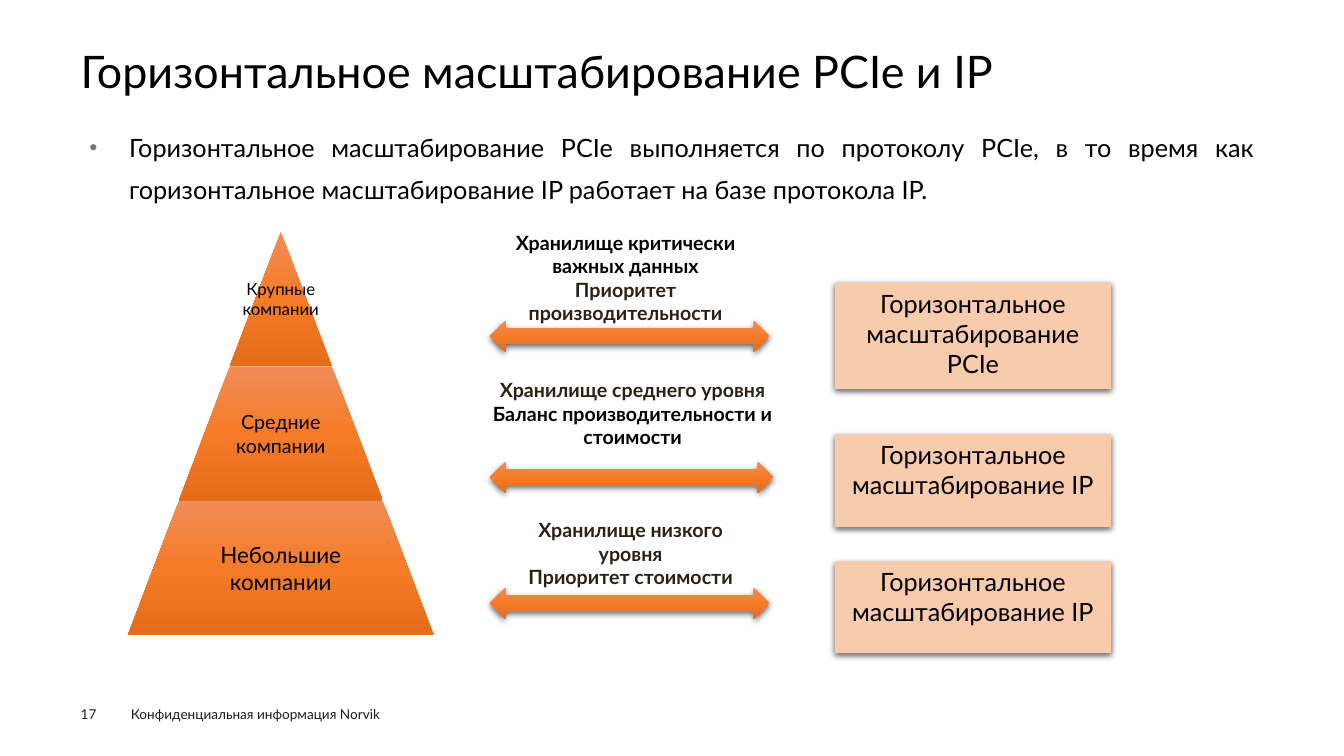
from copy import deepcopy
from lxml.etree import SubElement
from pptx import Presentation
from pptx.dml.color import RGBColor
from pptx.enum.shapes import MSO_SHAPE as Shape
from pptx.enum.text import MSO_ANCHOR as Anchor, PP_ALIGN as Align
from pptx.oxml.ns import qn
from pptx.util import Inches, Pt

FONT = "Lato"
BLACK, BROWN, FOOTER_GRAY, PEACH = "000000", "2D2015", "1D1D1B", "F8CBAD"
ORANGE_STOPS = [(0, "F18C57"), (0.5, "F67B28"), (1, "E56C19")]
DEFAULT_INSETS = (0.1, 0.05)


def color(value):
    return RGBColor.from_string(value)


def write(shape, lines, size, bold=False, align=Align.LEFT,
          insets=DEFAULT_INSETS, anchor=Anchor.TOP):
    frame = shape.text_frame
    frame.word_wrap = True
    frame.vertical_anchor = anchor
    frame.margin_left = frame.margin_right = Inches(insets[0])
    frame.margin_top = frame.margin_bottom = Inches(insets[1])
    frame.text = "\n".join(text for text, _ in lines)
    for paragraph, (_, ink) in zip(frame.paragraphs, lines):
        paragraph.alignment = align
        for run in paragraph.runs:
            run.font.name = FONT
            run.font.size = Pt(size)
            run.font.bold = bold
            run.font.color.rgb = color(ink)
    return frame


def add_label(slide, box, lines, size, **style):
    label = slide.shapes.add_textbox(*map(Inches, box))
    return write(label, lines, size, **style)


def fill_orange(shape):
    shape.line.fill.background()
    shape.fill.gradient()
    shape.fill.gradient_angle = 270
    stops = shape._element.spPr.find(qn("a:gradFill")).find(qn("a:gsLst"))
    stops.append(deepcopy(stops[-1]))
    for stop, (position, value) in zip(shape.fill.gradient_stops, ORANGE_STOPS):
        stop.position = position
        stop.color.rgb = color(value)


def add_shadow(shape):
    shape.shadow.inherit = False
    effects = shape._element.spPr.find(qn("a:effectLst"))
    shadow = SubElement(effects, qn("a:outerShdw"), blurRad=str(Pt(4.5)),
                        dist=str(Pt(1.5)), dir="5400000", rotWithShape="0")
    ink = SubElement(shadow, qn("a:srgbClr"), val=BLACK)
    SubElement(ink, qn("a:alpha"), val="63000")


def add_title(slide, box, title):
    frame = add_label(slide, box, [(title, BLACK)], 32, insets=(0, 0))
    frame.paragraphs[0].line_spacing = 0.9


def add_statement(slide, box, statement):
    frame = add_label(slide, box, [(statement, BLACK)], 18,
                      align=Align.JUSTIFY, insets=(0.09, 0.04))
    paragraph = frame.paragraphs[0]
    paragraph.line_spacing = 1.4
    props = paragraph._p.get_or_add_pPr()
    props.set("marL", str(Inches(0.39)))
    props.set("indent", str(Inches(-0.39)))
    bullet_color = SubElement(props, qn("a:buClr"))
    SubElement(bullet_color, qn("a:srgbClr"), val="777777")
    SubElement(props, qn("a:buSzPct"), val="50000")
    SubElement(props, qn("a:buFont"), typeface=FONT)
    SubElement(props, qn("a:buChar"), char="●")


def add_pyramid(slide, box, tiers):
    left, top, width, height = box
    center = left + width / 2
    tier_height = height / len(tiers)
    half_step = width / 2 / len(tiers)
    for level, (name, size, inset) in enumerate(tiers):
        upper, lower = level * half_step, (level + 1) * half_step
        ceiling = top + level * tier_height
        floor = ceiling + tier_height
        corners = [(center - lower, floor), (center - upper, ceiling),
                   (center + upper, ceiling), (center + lower, floor)]
        points = [(Inches(x), Inches(y)) for x, y in corners]
        outline = slide.shapes.build_freeform(*points[0])
        outline.add_line_segments(points[1:], close=True)
        tier = outline.convert_to_shape()
        tier.shadow.inherit = False
        fill_orange(tier)
        write(tier, [(name, BLACK)], size, align=Align.CENTER,
              insets=(inset, 0.02), anchor=Anchor.MIDDLE)


def add_priority(slide, arrow_box, label_box, lines):
    arrow = slide.shapes.add_shape(Shape.LEFT_RIGHT_ARROW, *map(Inches, arrow_box))
    fill_orange(arrow)
    add_shadow(arrow)
    add_label(slide, label_box, lines, 14, bold=True, align=Align.CENTER)


def add_solution(slide, box, name):
    card = slide.shapes.add_shape(Shape.RECTANGLE, *map(Inches, box))
    card.fill.solid()
    card.fill.fore_color.rgb = color(PEACH)
    card.line.fill.background()
    add_shadow(card)
    write(card, [(name, BLACK)], 18, align=Align.CENTER)


def add_footer(slide, left, top, number, notice):
    add_label(slide, (left, top + 0.05, 0.55, 0.16), [(number, FOOTER_GRAY)],
              9.7, insets=(0, 0))
    add_label(slide, (left + 0.4, top, 3.84, 0.26), [(notice, FOOTER_GRAY)], 9.7)


def main():
    deck = Presentation()
    deck.slide_width, deck.slide_height = Inches(13.33), Inches(7.5)
    slide = deck.slides.add_slide(deck.slide_layouts[6])

    add_footer(slide, 0.8, 6.95, "17", "Конфиденциальная информация Norvik")
    add_title(slide, (0.8, 0.49, 11.73, 0.54),
              "Горизонтальное масштабирование PCIe и IP")
    add_statement(slide, (0.8, 1.15, 11.73, 5.33),
                  "Горизонтальное масштабирование PCIe выполняется по протоколу "
                  "PCIe, в то время как горизонтальное масштабирование IP "
                  "работает на базе протокола IP.")
    add_pyramid(slide, (1.27, 2.3, 3.03, 4), [
        ("Крупные компании", 12, 0.02),
        ("Средние компании", 14, 0.37),
        ("Небольшие компании", 16, 0.55),
    ])

    priorities = [
        (3.18, 2.77, (4.77, 2.24, 2.87, 0.64),
         [("Хранилище критически важных данных", BLACK),
          ("Приоритет производительности", BROWN)]),
        (4.58, 2.81, (4.69, 3.7, 3.17, 0.91),
         [("Хранилище среднего уровня", BROWN),
          ("Баланс производительности и стоимости", BLACK)]),
        (5.83, 2.77, (4.98, 5.09, 2.55, 0.64),
         [("Хранилище низкого уровня", BROWN),
          ("Приоритет стоимости", BROWN)]),
    ]
    for top, width, label_box, lines in priorities:
        add_priority(slide, (4.86, top, width, 0.31), label_box, lines)

    solutions = [(2.81, 1.05, "PCIe"), (4.31, 0.92, "IP"), (5.57, 0.91, "IP")]
    for top, height, protocol in solutions:
        add_solution(slide, (8.28, top, 2.74, height),
                     f"Горизонтальное масштабирование {protocol}")

    deck.save("out.pptx")


if __name__ == "__main__":
    main()
